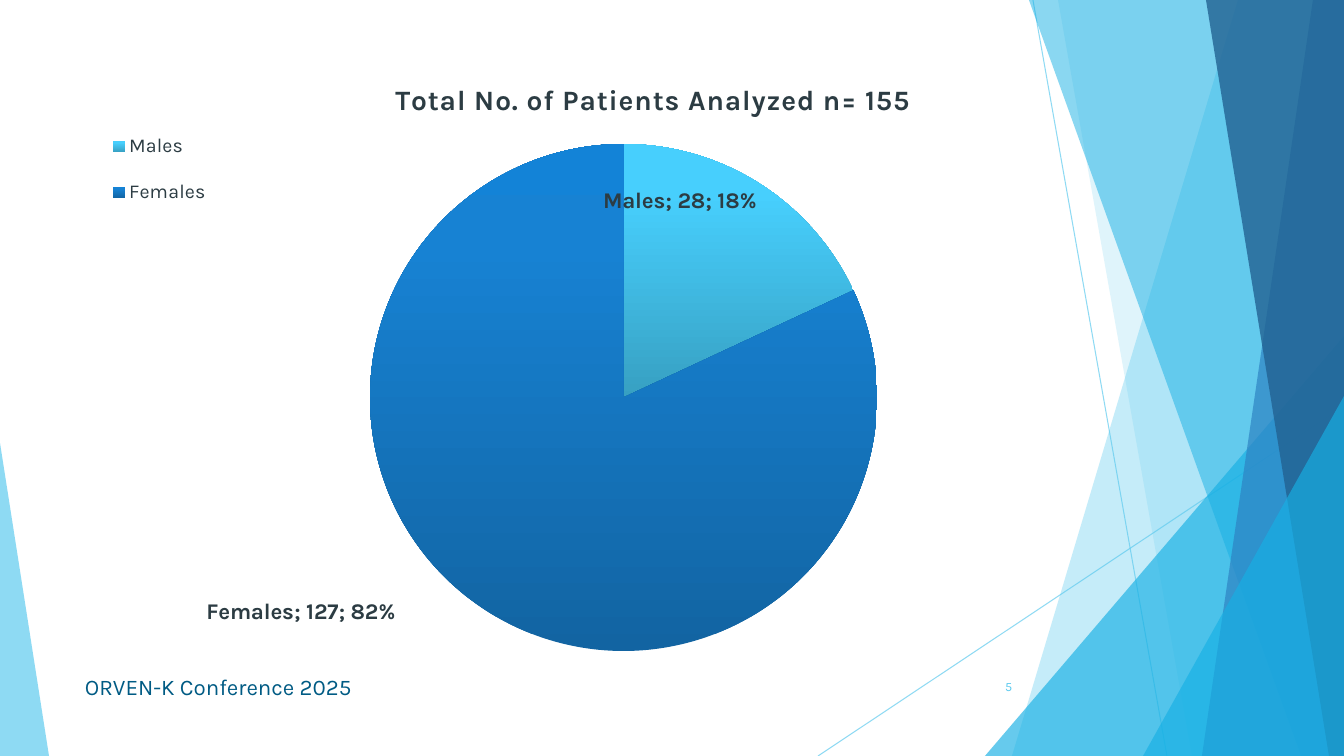
from copy import deepcopy

from lxml.etree import SubElement
from pptx import Presentation
from pptx.chart.data import CategoryChartData
from pptx.dml.color import RGBColor
from pptx.enum.chart import XL_CHART_TYPE, XL_LABEL_POSITION, XL_LEGEND_POSITION
from pptx.enum.shapes import MSO_CONNECTOR, MSO_SHAPE
from pptx.enum.text import MSO_ANCHOR, PP_ALIGN
from pptx.oxml import parse_xml
from pptx.oxml.ns import nsdecls, qn
from pptx.util import Pt

PX = 12192000 / 1344  # EMU in one px
W, H = 1344, 756
FONT = "Karla"
SKY = RGBColor(0x5F, 0xCB, 0xEF)
CYAN = RGBColor(0x17, 0xB0, 0xE4)
BLUE = RGBColor(0x2E, 0x83, 0xC3)
NAVY = RGBColor(0x22, 0x62, 0x92)
INK = RGBColor(0x2C, 0x3C, 0x43)
TEAL = RGBColor(0x00, 0x5B, 0x84)
MALES = [RGBColor(0x37, 0xA0, 0xC2), RGBColor(0x47, 0xCF, 0xFD), RGBColor(0x46, 0xD1, 0xFF)]
FEMALES = [RGBColor(0x12, 0x64, 0xA2), RGBColor(0x17, 0x82, 0xD3), RGBColor(0x13, 0x83, 0xD7)]


def emu(*lengths):
    return [round(n * PX) for n in lengths]


def set_font(font, size, color, bold=False):
    font.name, font.size, font.bold = FONT, Pt(size), bold
    font.color.rgb = color


def add_text(s, box, text, size=16, color=INK, align=PP_ALIGN.LEFT):
    tf = s.shapes.add_textbox(*emu(*box)).text_frame
    tf.word_wrap = True
    tf.vertical_anchor = MSO_ANCHOR.MIDDLE
    p = tf.paragraphs[0]
    p.alignment = align
    r = p.add_run()
    r.text = text
    set_font(r.font, size, color)


def set_alpha(sp, percent):
    for clr in sp._element.spPr.iter(qn("a:srgbClr")):
        SubElement(clr, qn("a:alpha")).set("val", str(percent * 1000))


def paint(sp, color, alpha):
    sp.shadow.inherit = False
    sp.fill.solid()
    sp.fill.fore_color.rgb = color
    sp.line.fill.background()
    set_alpha(sp, alpha)


# Decoration: thin lines, slanted bands, corner triangles
def add_line(s, x1, y1, x2, y2):
    ln = s.shapes.add_connector(MSO_CONNECTOR.STRAIGHT, *emu(x1, y1, x2, y2))
    ln.line.color.rgb = SKY
    ln.line.width = Pt(0.75)
    set_alpha(ln, 70)
    SubElement(ln._element.spPr, qn("a:effectLst"))


def add_band(s, top, bottom, color, alpha):
    fb = s.shapes.build_freeform(top, 0, scale=PX)
    fb.add_line_segments([(W, 0), (W, H), (bottom, H)], close=True)
    paint(fb.convert_to_shape(), color, alpha)


def add_triangle(s, left, top, width, apex, color, alpha):
    sp = s.shapes.add_shape(MSO_SHAPE.ISOSCELES_TRIANGLE, *emu(left, top, width, H - top))
    sp.adjustments[0] = apex
    paint(sp, color, alpha)


def add_decoration(s):
    add_line(s, 1033, 0, 1167, H)
    add_line(s, W, 406, 818, H)
    add_band(s, 1238, 1012, SKY, 36)
    add_band(s, 1058, 1192, SKY, 20)
    add_triangle(s, 985, 336, 359, 1, CYAN, 66)
    add_band(s, 1029, 1301, CYAN, 50)
    add_band(s, 1313, 1202, BLUE, 70)
    add_band(s, 1206, 1329, NAVY, 80)
    add_triangle(s, 1143, 396, 201, 1, CYAN, 66)
    add_triangle(s, 0, 443, 49, 0, SKY, 70)


# Chart: pie with its own title, legend and labels
def set_layout(parent, index, target=None, edge=True, **fractions):
    for old in parent.findall(qn("c:layout")):
        parent.remove(old)
    layout = parse_xml(f"<c:layout {nsdecls('c')}><c:manualLayout/></c:layout>")
    if target:
        SubElement(layout[0], qn("c:layoutTarget")).set("val", target)
    if edge:
        for mode in ("xMode", "yMode"):
            SubElement(layout[0], qn(f"c:{mode}")).set("val", "edge")
    for key, value in fractions.items():
        SubElement(layout[0], qn(f"c:{key}")).set("val", str(value))
    parent.insert(index, layout)


def set_gradient(ser, point, colors):
    fill = point.format.fill
    fill.gradient()
    fill.gradient_angle = 90
    stops = ser._element.xpath(".//a:gsLst")[-1]
    stops.append(deepcopy(stops[-1]))
    for stop, color, pos in zip(fill.gradient_stops, colors, (0, 0.8, 1)):
        stop.color.rgb = color
        stop.position = pos
    point.format.line.fill.background()


def show_label_parts(labels):
    for tag in ("showVal", "showCatName", "showPercent"):
        labels.find(qn(f"c:{tag}")).set("val", "1")
    sep = parse_xml(f"<c:separator {nsdecls('c')}>; </c:separator>")
    labels.find(qn("c:showBubbleSize")).addnext(sep)


def add_labels(ser):
    labels = ser.data_labels
    female = ser.points[1].data_label
    for item in (labels, female):
        set_font(item.font, 16, INK, bold=True)
        item.position = XL_LABEL_POSITION.INSIDE_END
    d_lbls = labels._element
    d_lbl = d_lbls.find(qn("c:dLbl"))
    for element in (d_lbls, d_lbl):
        show_label_parts(element)
    set_layout(d_lbl, 1, edge=False, x=-0.24, y=0.03)
    for leader in d_lbls.findall(qn("c:showLeaderLines")):
        leader.set("val", "0")


def add_patient_chart(s, box):
    data = CategoryChartData()
    data.categories = ["Males", "Females"]
    data.add_series("Series 1", (28, 127))
    chart = s.shapes.add_chart(XL_CHART_TYPE.PIE, *emu(*box), data).chart
    set_font(chart.font, 10, INK)
    chart.plots[0].vary_by_categories = True

    chart.has_title = True
    r = chart.chart_title.text_frame.paragraphs[0].add_run()
    r.text = "Total No. of Patients Analyzed n= 155"
    set_font(r.font, 20, INK, bold=True)
    r.font._element.set("spc", "50")
    set_layout(chart.chart_title._element, 1, x=0.29, y=0.04)

    chart.has_legend = True
    legend = chart.legend
    legend.position = XL_LEGEND_POSITION.BOTTOM
    legend.include_in_layout = False
    set_font(legend.font, 14, INK)
    set_layout(legend._element, 1, x=0.03, y=0.1, w=0.13, h=0.19)

    plot_area = chart._chartSpace.find(".//" + qn("c:plotArea"))
    set_layout(plot_area, 0, "inner", x=0, y=0.153, w=0.974, h=0.834)
    ser = chart.plots[0].series[0]
    for i, colors in enumerate((MALES, FEMALES)):
        set_gradient(ser, ser.points[i], colors)
    add_labels(ser)


def add_footer(s, left, top, width, height):
    number_width = 76
    add_text(s, (left + width - number_width, top, number_width, height), "5",
             size=9, color=SKY, align=PP_ALIGN.RIGHT)
    add_text(s, (left, top, 694, height), "ORVEN-K Conference 2025", color=TEAL)


def main():
    prs = Presentation()
    prs.slide_width, prs.slide_height = emu(W, H)
    s = prs.slides.add_slide(prs.slide_layouts[6])
    add_decoration(s)
    add_footer(s, 75, 667, 947, 40)
    add_patient_chart(s, (47, 51, 1184, 608))
    prs.save("out.pptx")


if __name__ == "__main__":
    main()
